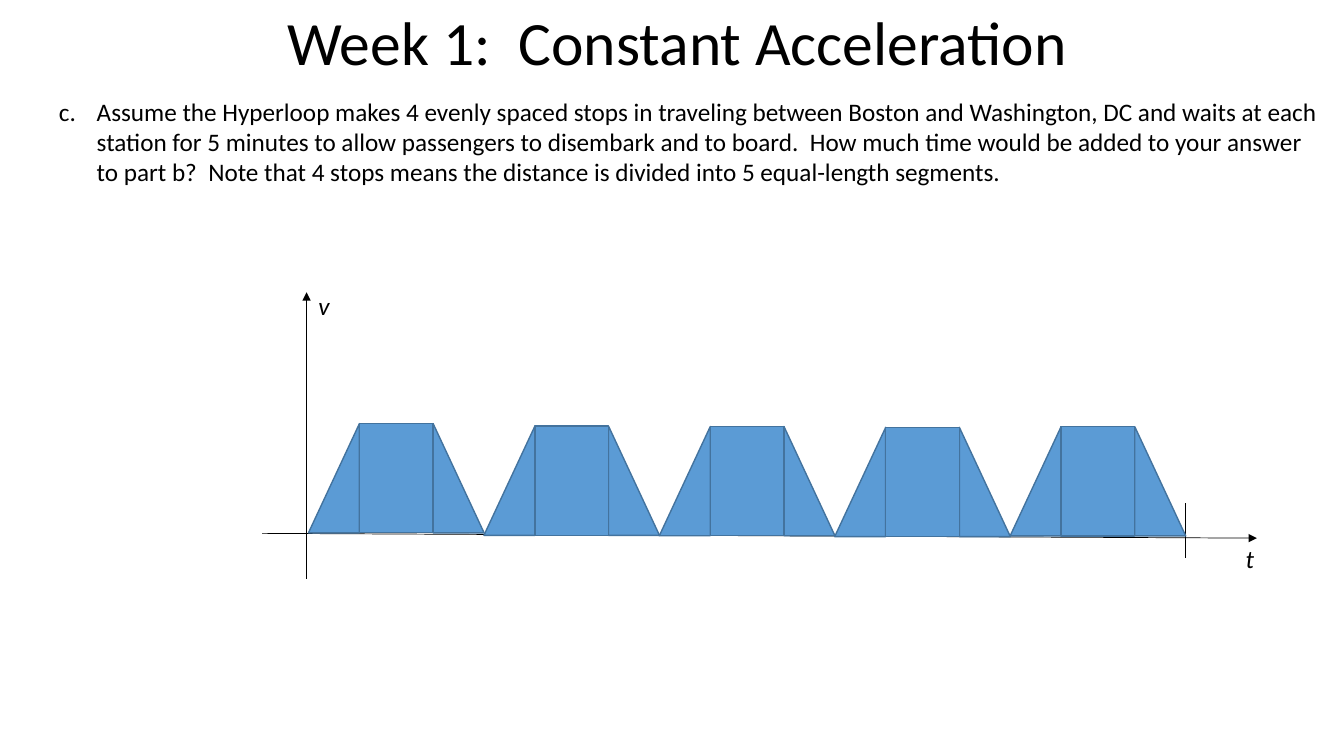
from dataclasses import dataclass

from lxml import etree
from pptx import Presentation
from pptx.dml.color import RGBColor
from pptx.enum.shapes import MSO_CONNECTOR, MSO_SHAPE
from pptx.enum.text import MSO_ANCHOR, MSO_AUTO_SIZE, PP_ALIGN
from pptx.oxml.ns import qn
from pptx.util import Pt

STRAIGHT = MSO_CONNECTOR.STRAIGHT
RECTANGLE = MSO_SHAPE.RECTANGLE
RIGHT_TRIANGLE = MSO_SHAPE.RIGHT_TRIANGLE
MIDDLE = MSO_ANCHOR.MIDDLE
CENTER = PP_ALIGN.CENTER
NO_FIT = MSO_AUTO_SIZE.NONE
GROW = MSO_AUTO_SIZE.SHAPE_TO_FIT_TEXT


@dataclass(frozen=True)
class Theme:
    font: str = "Calibri"
    ink: RGBColor = RGBColor(0, 0, 0)
    fill: RGBColor = RGBColor(0x5B, 0x9B, 0xD5)
    outline: RGBColor = RGBColor(0x43, 0x73, 0x9E)
    title_size: int = 44
    body_size: int = 18
    axis_width: float = 0.5
    outline_width: float = 1


class SlideBuilder:
    def __init__(self, deck, theme):
        self.theme = theme
        self.page = deck.slides.add_slide(deck.slide_layouts[5])

    def style(self, para, size, italic=False):
        para.font.name = self.theme.font
        para.font.size = Pt(size)
        para.font.italic = italic
        para.font.color.rgb = self.theme.ink

    def title(self, text, left, top, width, height):
        box = self.page.shapes.title
        box.left, box.top, box.width, box.height = map(Pt, (left, top, width, height))
        frame = box.text_frame
        frame.text = text
        frame.auto_size = NO_FIT
        frame.vertical_anchor = MIDDLE
        para = frame.paragraphs[0]
        para.alignment = CENTER
        para.line_spacing = 0.9
        self.style(para, self.theme.title_size)

    def text(self, text, left, top, width, height, italic=False):
        box = self.page.shapes.add_textbox(*map(Pt, (left, top, width, height)))
        frame = box.text_frame
        frame.word_wrap = True
        frame.auto_size = GROW
        para = frame.paragraphs[0]
        para.text = text
        self.style(para, self.theme.body_size, italic)
        return para

    def lettered(self, text, start, indent, left, top, width, height):
        para = self.text(text, left, top, width, height)
        properties = para._p.get_or_add_pPr()
        properties.set("marL", str(Pt(indent)))
        properties.set("indent", str(-Pt(indent)))
        etree.SubElement(properties, qn("a:buFont"), typeface="+mj-lt")
        etree.SubElement(
            properties, qn("a:buAutoNum"), type="alphaLcPeriod", startAt=str(start)
        )

    def line(self, x1, y1, x2, y2, arrow=False):
        connector = self.page.shapes.add_connector(STRAIGHT, *map(Pt, (x1, y1, x2, y2)))
        connector.line.color.rgb = self.theme.ink
        connector.line.width = Pt(self.theme.axis_width)
        if arrow:
            etree.SubElement(connector.line._get_or_add_ln(), qn("a:tailEnd"), type="triangle")
        etree.SubElement(connector._element.spPr, qn("a:effectLst"))

    def area(self, group, kind, left, top, width, height, mirrored=False):
        shape = group.shapes.add_shape(kind, *map(Pt, (left, top, width, height)))
        shape.shadow.inherit = False
        shape.fill.solid()
        shape.fill.fore_color.rgb = self.theme.fill
        shape.line.color.rgb = self.theme.outline
        shape.line.width = Pt(self.theme.outline_width)
        if mirrored:
            shape._element.spPr.find(qn("a:xfrm")).set("flipH", "1")

    def trapezoid(self, left, top, ramp, cruise, height):
        group = self.page.shapes.add_group_shape()
        self.area(group, RIGHT_TRIANGLE, left, top, ramp, height, mirrored=True)
        self.area(group, RIGHT_TRIANGLE, left + ramp + cruise, top, ramp, height)
        self.area(group, RECTANGLE, left + ramp, top, cruise, height)


def main():
    deck = Presentation()
    deck.slide_width, deck.slide_height = Pt(960), Pt(540)
    slide = SlideBuilder(deck, Theme())

    slide.title("Week 1:  Constant Acceleration", 70, 0, 828, 65)
    slide.lettered(
        "Assume the Hyperloop makes 4 evenly spaced stops in traveling between "
        "Boston and Washington, DC and waits at each station for 5 minutes to allow "
        "passengers to disembark and to board.  How much time would be added to your "
        "answer to part b?  Note that 4 stops means the distance is divided into 5 "
        "equal-length segments.",
        3, 27, 35, 65, 914.4, 72.7,
    )

    slide.line(187.2, 381, 897.8, 384.4, arrow=True)
    slide.line(219, 413.3, 219, 208.8, arrow=True)
    slide.text("t", 882.7, 384.5, 30, 29, italic=True)
    slide.text("v", 220.3, 204, 30, 29, italic=True)
    slide.line(846.7, 359.3, 846.7, 398.9)

    first_left, pitch = 220.4, 125.3
    for segment, top in enumerate((302.6, 304.4, 304.7, 305.3, 304.8)):
        slide.trapezoid(first_left + segment * pitch, top, 36.4, 52.6, 78)

    deck.save("out.pptx")


if __name__ == "__main__":
    main()
